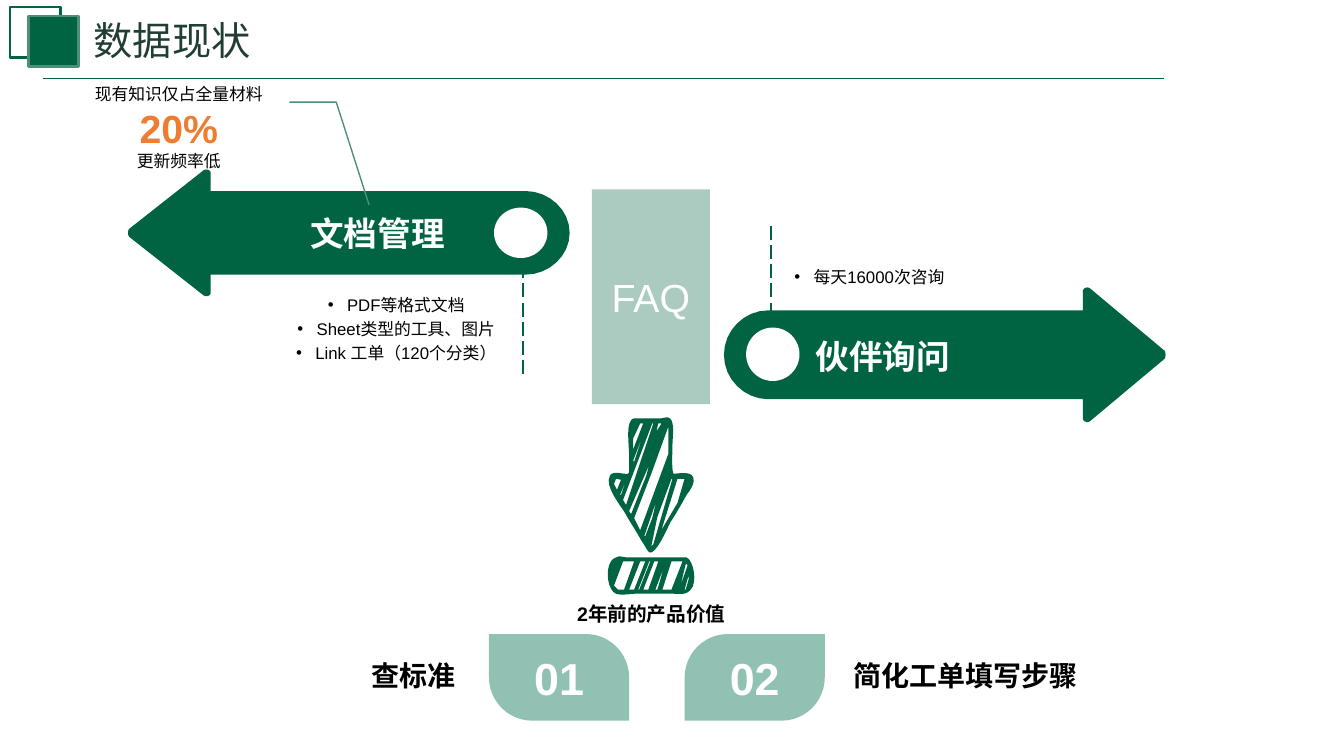
from dataclasses import dataclass

from lxml import etree
from pptx import Presentation
from pptx.dml.color import RGBColor
from pptx.enum.dml import MSO_LINE
from pptx.enum.shapes import MSO_CONNECTOR, MSO_SHAPE
from pptx.enum.text import MSO_ANCHOR, MSO_AUTO_SIZE, PP_ALIGN
from pptx.oxml.ns import qn
from pptx.util import Inches, Pt

LEFT, CENTER, RIGHT = PP_ALIGN.LEFT, PP_ALIGN.CENTER, PP_ALIGN.RIGHT
TOP, MIDDLE, BOTTOM = MSO_ANCHOR.TOP, MSO_ANCHOR.MIDDLE, MSO_ANCHOR.BOTTOM
RECT, OVAL = MSO_SHAPE.RECTANGLE, MSO_SHAPE.OVAL
LEAF, CALLOUT = MSO_SHAPE.ROUND_2_DIAG_RECTANGLE, MSO_SHAPE.LINE_CALLOUT_2_NO_BORDER
STRAIGHT, LONG_DASH = MSO_CONNECTOR.STRAIGHT, MSO_LINE.LONG_DASH


@dataclass(frozen=True)
class Theme:
    font: str = "Arial"
    green: str = "006341"
    edge: str = "4F8E7A"
    leaf: str = "91C1B2"
    orange: str = "ED7D31"
    white: str = "FFFFFF"
    black: str = "000000"
    title_stops: tuple = ((0, "162B25"), (50, "203E34"), (100, "26493E"))
    small: int = 12
    caption: int = 14
    label: int = 20
    heading: int = 24
    title: int = 28
    number: int = 32


T = Theme()
INSET = (0.12, 0.12, 0.12, 0.12)

# Upper half of a right-pointing arrow: x in inches, y as a share of the height.
ARROW_TIP = (4.38, 0.5)
ARROW_HALF = [(4.38, 0.485, 4.375, 0.475, 4.37, 0.47), (3.63, 0.015),
              (3.6, 0, 3.56, 0.015, 3.56, 0.037), (3.56, 0.176), (0.44, 0.176),
              (0.2, 0.176, 0, 0.324, 0, 0.5)]

SKETCH_HEAD = [
    (6.63, 4.14, 6.65, 4.15, 6.66, 4.17), (6.69, 4.23, 6.67, 4.35, 6.67, 4.42),
    (6.67, 4.46, 6.66, 4.67, 6.68, 4.7), (6.73, 4.7, 6.89, 4.66, 6.88, 4.77),
    (6.88, 4.82, 6.83, 4.88, 6.81, 4.91), (6.76, 5, 6.71, 5.09, 6.65, 5.18),
    (6.63, 5.22, 6.5, 5.52, 6.44, 5.48), (6.41, 5.45, 6.39, 5.4, 6.36, 5.36),
    (6.31, 5.27, 6.25, 5.18, 6.2, 5.09), (6.16, 5.02, 5.99, 4.82, 6.05, 4.72),
    (6.07, 4.67, 6.17, 4.7, 6.2, 4.7), (6.22, 4.7, 6.24, 4.71, 6.24, 4.67),
    (6.24, 4.52), (6.24, 4.42, 6.21, 4.23, 6.26, 4.17),
    (6.27, 4.15, 6.3, 4.15, 6.31, 4.15), (6.56, 4.15), (6.61, 4.14)]
SKETCH_BASE = [
    (6.17, 5.52, 6.2, 5.53, 6.22, 5.53), (6.8, 5.53), (6.81, 5.53),
    (6.88, 5.56, 6.92, 5.78, 6.85, 5.85), (6.8, 5.91, 6.73, 5.89, 6.67, 5.89),
    (6.31, 5.89), (6.25, 5.89, 6.17, 5.91, 6.11, 5.89),
    (6.03, 5.86, 6, 5.66, 6.06, 5.57), (6.08, 5.54, 6.11, 5.53, 6.14, 5.52)]
SKETCH_GAPS = [
    [(6.83, 5.71), (6.79, 5.85), (6.8, 5.85), (6.83, 5.75)],
    [(6.58, 5.64), (6.5, 5.85), (6.52, 5.85), (6.55, 5.75)],
    [(6.81, 5.59), (6.8, 5.6), (6.75, 5.81), (6.82, 5.61)],
    [(6.66, 5.57), (6.57, 5.85), (6.66, 5.85), (6.77, 5.57)],
    [(6.49, 5.57), (6.38, 5.85), (6.43, 5.85), (6.53, 5.57)],
    [(6.44, 5.57), (6.33, 5.85), (6.34, 5.85), (6.45, 5.57)],
    [(6.35, 5.57), (6.24, 5.85), (6.29, 5.85), (6.4, 5.57)],
    [(6.18, 5.57), (6.09, 5.81), (6.13, 5.85), (6.19, 5.85), (6.29, 5.57)],
    [(6.51, 4.97), (6.39, 5.32), (6.4, 5.32), (6.47, 5.14)],
    [(6.11, 4.75), (6.09, 4.8), (6.12, 4.86), (6.16, 4.76)],
    [(6.21, 4.76), (6.15, 4.91), (6.16, 4.91)],
    [(6.72, 4.75), (6.56, 5.26), (6.72, 4.99), (6.79, 4.75)],
    [(6.66, 4.75), (6.52, 5.13), (6.46, 5.42), (6.48, 5.4), (6.67, 4.75)],
    [(6.44, 4.61), (6.24, 5.07), (6.26, 5.1), (6.41, 4.72)],
    [(6.63, 4.23), (6.46, 4.7), (6.29, 5.14), (6.35, 5.26), (6.63, 4.5)],
    [(6.53, 4.2), (6.51, 4.28), (6.55, 4.22), (6.56, 4.2)],
    [(6.47, 4.2), (6.18, 4.96), (6.21, 5.01), (6.48, 4.2)],
    [(6.35, 4.2), (6.28, 4.35), (6.28, 4.46), (6.38, 4.2)],
    [(6.38, 4.31), (6.28, 4.57), (6.29, 4.58)]]


def color(value):
    return RGBColor.from_string(value)


def trace(start, segments, steps=8):
    """Turn lines (x, y) and cubic curves (six numbers) into points."""
    points = [start]
    for seg in segments:
        if len(seg) == 2:
            points.append(seg)
            continue
        (x0, y0), (x1, y1, x2, y2, x3, y3) = points[-1], seg
        for i in range(1, steps + 1):
            t = i / steps
            a, b, c, d = (1 - t) ** 3, 3 * t * (1 - t) ** 2, 3 * t * t * (1 - t), t ** 3
            points.append((a * x0 + b * x1 + c * x2 + d * x3,
                           a * y0 + b * y1 + c * y2 + d * y3))
    return points


def style(s, fill=None, line=None, width=1):
    s.shadow.inherit = False
    if fill:
        s.fill.solid()
        s.fill.fore_color.rgb = color(fill)
    else:
        s.fill.background()
    if line:
        s.line.color.rgb = color(line)
        s.line.width = Pt(width)
    else:
        s.line.fill.background()


def place(s, box):
    s.left, s.top, s.width, s.height = map(Inches, box)


def write(s, lines, align=LEFT, anchor=TOP, inset=(0.1, 0.05, 0.1, 0.05)):
    """Write one paragraph for each (text, size, colour, bold)."""
    tf = s.text_frame
    tf.word_wrap, tf.auto_size, tf.vertical_anchor = True, MSO_AUTO_SIZE.NONE, anchor
    tf.margin_left, tf.margin_top, tf.margin_right, tf.margin_bottom = map(Inches, inset)
    for i, (text, size, ink, bold) in enumerate(lines):
        p = tf.add_paragraph() if i else tf.paragraphs[0]
        p.alignment = align
        r = p.add_run()
        r.text = text
        r.font.name, r.font.size, r.font.bold = T.font, Pt(size), bold
        r.font.color.rgb = color(ink)
    return tf


def add_shape(shapes, kind, box, fill=None, line=None, width=1, flip=False, adj=()):
    s = shapes.add_shape(kind, *map(Inches, box))
    style(s, fill, line, width)
    for i, value in enumerate(adj):
        s.adjustments[i] = value
    if flip:
        s._element.spPr.find(qn("a:xfrm")).set("flipH", "1")
    return s


def add_label(shapes, box, text, size, ink, align=LEFT, anchor=BOTTOM, inset=INSET):
    write(shapes.add_textbox(*map(Inches, box)), [(text, size, ink, True)], align, anchor, inset)


def add_line(shapes, x1, y1, x2, y2, dash=None):
    s = shapes.add_connector(STRAIGHT, *map(Inches, (x1, y1, x2, y2)))
    s.line.color.rgb, s.line.width = color(T.green), Pt(1.25)
    if dash:
        s.line.dash_style = dash
    etree.SubElement(s._element.spPr, qn("a:effectLst"))


def add_outline(shapes, contours):
    contours = [[(Inches(x), Inches(y)) for x, y in c] for c in contours]
    builder = shapes.build_freeform(*contours[0][0], scale=1.0)
    for i, contour in enumerate(contours):
        if i:
            builder.move_to(*contour[0])
        builder.add_line_segments(contour[1:], close=True)
    style(builder.convert_to_shape(), T.green)


def add_arrow(shapes, left, top, height, to_left=False):
    half = trace(ARROW_TIP, ARROW_HALF)
    unit = half + [(x, 1 - y) for x, y in reversed(half[1:-1])]
    add_outline(shapes, [[(left + (ARROW_TIP[0] - x if to_left else x), top + y * height)
                          for x, y in unit]])


def fill_title(s):
    place(s, (0.83, 0.11, 5.14, 0.57))
    tf = write(s, [("数据现状", T.title, T.black, False)])
    fill = tf.paragraphs[0].runs[0].font.fill
    fill.gradient()
    fill.gradient_angle = 0
    stops = s._element.find(".//" + qn("a:gsLst"))
    for stop in list(stops):
        stops.remove(stop)
    for pos, value in T.title_stops:
        stop = etree.SubElement(stops, qn("a:gs"), pos=str(pos * 1000))
        etree.SubElement(stop, qn("a:srgbClr"), val=value)


def fill_list(s, box, items, align=LEFT):
    place(s, box)
    tf = write(s, [(item, T.small, T.black, False) for item in items], align, TOP, INSET)
    for p in tf.paragraphs:
        p.line_spacing, p.space_before = 1.2, Pt(0)
        pPr = p._p.get_or_add_pPr()
        pPr.set("marL", str(Inches(0.19)))
        pPr.set("indent", str(-Inches(0.19)))
        etree.SubElement(pPr, qn("a:buChar"), char="•")


def main():
    prs = Presentation()
    prs.slide_width, prs.slide_height = Inches(13.33), Inches(7.5)
    slide = prs.slides.add_slide(prs.slide_layouts[3])
    shapes = slide.shapes
    title, documents, inquiries = slide.placeholders

    fill_title(title)
    add_line(shapes, 0.43, 0.78, 11.54, 0.78)
    add_shape(shapes, RECT, (0.1, 0.07, 0.5, 0.5), line=T.green, width=2)
    add_shape(shapes, RECT, (0.28, 0.16, 0.5, 0.5), T.green, T.edge, 2)

    faq = add_shape(shapes, RECT, (5.87, 1.88, 1.17, 2.13), T.green)
    etree.SubElement(faq._element.spPr.find(".//" + qn("a:srgbClr")), qn("a:alpha"), val="33000")
    write(faq, [("FAQ", T.title, T.white, False)], CENTER, MIDDLE)

    fill_list(inquiries, (7.76, 2.49, 2.14, 1.71), ["每天16000次咨询"])
    add_line(shapes, 7.65, 2.24, 7.65, 3.84, LONG_DASH)
    add_arrow(shapes, 7.18, 2.84, 1.36)
    add_shape(shapes, OVAL, (7.4, 3.25, 0.53, 0.53), T.white)
    add_label(shapes, (7.97, 3.14, 3.1, 0.71), "伙伴询问", T.heading, T.white)

    fill_list(documents, (2.59, 2.76, 2.68, 0.99),
              ["PDF等格式文档", "Sheet类型的工具、图片", "Link 工单（120个分类）"], CENTER)
    add_line(shapes, 5.19, 2.24, 5.19, 3.73, LONG_DASH)
    add_arrow(shapes, 1.27, 1.67, 1.28, to_left=True)
    add_shape(shapes, OVAL, (4.9, 2.06, 0.53, 0.5), T.white)
    add_label(shapes, (1.77, 1.97, 2.92, 0.66), "文档管理", T.heading, T.white, RIGHT,
              inset=(0.12, 0.12, 0.28, 0.12))

    add_outline(shapes, [trace((6.61, 4.14), SKETCH_HEAD),
                         trace((6.14, 5.52), SKETCH_BASE)] + SKETCH_GAPS)
    add_label(shapes, (5.6, 5.92, 1.72, 0.34), "2年前的产品价值", T.caption, T.black,
              CENTER, TOP, (0, 0.05, 0, 0.05))

    for number, left, flip, text, text_left, align in (
            ("01", 4.85, True, "查标准", 1.59, RIGHT),
            ("02", 6.79, False, "简化工单填写步骤", 8.34, LEFT)):
        leaf = add_shape(shapes, LEAF, (left, 6.29, 1.39, 0.86), T.leaf, flip=flip, adj=(0.5, 0))
        write(leaf, [(number, T.number, T.white, True)], CENTER, MIDDLE)
        add_label(shapes, (text_left, 6.63, 3.05, 0.36), text, T.label, T.black, align)

    callout = add_shape(shapes, CALLOUT, (0.61, 0.86, 2.33, 0.81), line=T.edge, flip=True,
                        adj=(0.19, 0.03, 0.19, -0.17, 1.45, -0.31))
    write(callout, [("现有知识仅占全量材料", T.small, T.black, False),
                    ("20%", T.title, T.orange, True),
                    ("更新频率低", T.small, T.black, False)], CENTER, MIDDLE)
    prs.save("out.pptx")


if __name__ == "__main__":
    main()
